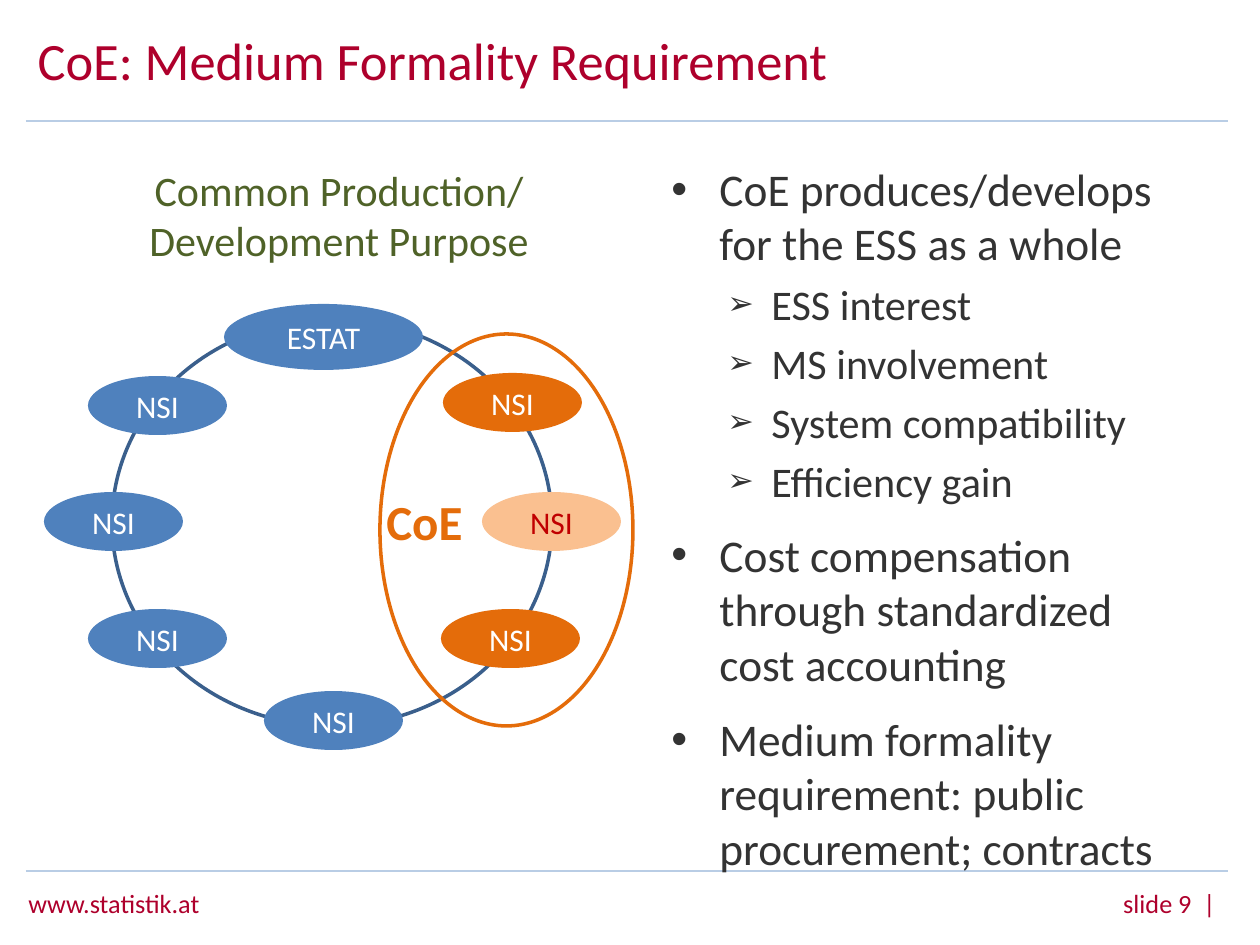
from lxml.etree import SubElement
from pptx import Presentation
from pptx.dml.color import RGBColor
from pptx.enum.shapes import MSO_CONNECTOR as CONN, MSO_SHAPE as SHAPE
from pptx.enum.text import MSO_ANCHOR as ANCHOR, PP_ALIGN as ALIGN
from pptx.oxml.ns import qn
from pptx.util import Pt

PX = 914400 / 126
FONT = "Calibri"
COLORS = {
    "brand": "AE002C", "rule": "B9CDE5", "body": "333333", "purpose": "4F6228",
    "ring": "3A5F8C", "member": "4F81BD", "coe": "E46C0A", "lead": "FAC090",
    "lead_text": "C00000", "white": "FFFFFF",
}
BULLETS = [
    (0, "CoE produces/develops for the ESS as a whole"),
    (1, "ESS interest"),
    (1, "MS involvement"),
    (1, "System compatibility"),
    (1, "Efficiency gain"),
    (0, "Cost compensation through standardized cost accounting"),
    (0, "Medium formality requirement: public procurement; contracts"),
]
LEVELS = [
    {"char": "•", "pct": 100, "left": 48, "hang": 48, "size": 25.9, "before": 12},
    {"char": "➢", "pct": 75, "left": 100, "hang": 44, "size": 24.1, "before": 4.8},
]


def emu(*lengths):
    """Turn px lengths into EMU."""
    return [round(n * PX) for n in lengths]


def rgb(name):
    """Look up a named colour."""
    return RGBColor.from_string(COLORS[name])


def style(p, size, color, bold=False, align=ALIGN.LEFT):
    """Format a paragraph and its runs."""
    p.alignment = align
    for r in p.runs:
        r.font.name, r.font.size, r.font.bold = FONT, Pt(size), bold
        r.font.color.rgb = rgb(color)


def add_text(s, box, text, size, color, bold=False, align=ALIGN.LEFT, wrap=True):
    """Add a one-paragraph text box."""
    tf = s.shapes.add_textbox(*emu(*box)).text_frame
    tf.word_wrap = wrap
    tf.paragraphs[0].text = text
    style(tf.paragraphs[0], size, color, bold, align)


def add_rule(s, x, y, w):
    """Add a horizontal rule."""
    line = s.shapes.add_connector(CONN.STRAIGHT, *emu(x, y, x + w, y))
    line.line.color.rgb = rgb("rule")
    line.line.width = Pt(1.5)
    SubElement(line._element.spPr, qn("a:effectLst"))


def add_oval(s, box, fill=None, line=None, text="", color="white"):
    """Add a filled, labelled oval or an outlined one."""
    sp = s.shapes.add_shape(SHAPE.OVAL, *emu(*box))
    sp.shadow.inherit = False
    if fill:
        sp.fill.solid()
        sp.fill.fore_color.rgb = rgb(fill)
    else:
        sp.fill.background()
    if line:
        sp.line.color.rgb = rgb(line)
        sp.line.width = Pt(2)
    else:
        sp.line.fill.background()
    if text:
        tf = sp.text_frame
        tf.vertical_anchor = ANCHOR.MIDDLE
        tf.text = text
        style(tf.paragraphs[0], 18, color, align=ALIGN.CENTER)


def add_header(s, x, y, w, h):
    """Place the title and the rule below it."""
    title = s.shapes.title
    title.left, title.top, title.width, title.height = emu(x, y, w - 241, h - 23)
    tf = title.text_frame
    tf.vertical_anchor = ANCHOR.MIDDLE
    tf.text = "CoE: Medium Formality Requirement"
    style(tf.paragraphs[0], 30, "brand")
    tf.paragraphs[0].line_spacing = Pt(30)
    add_rule(s, x + 1, y + h, w)


def add_footer(s, x, y, w, h):
    """Place the footer rule, the address and the slide number."""
    add_rule(s, x, y, w)
    add_text(s, (x - 10, y + 10, 286, h), "www.statistik.at", 15, "brand")
    add_text(s, (x + w - 456, y + 10, 456, h), "slide 9  |", 15, "brand",
             align=ALIGN.RIGHT)


def add_network(s, x, y, w, h):
    """Draw the ring of institutes and the centre of excellence."""
    add_oval(s, (x + 68, y + 161, 440, 407), line="ring")
    add_oval(s, (x + 180, y + 146, 199, 66), "member", text="ESTAT")
    members = [
        (44, 451, "member"), (44, 218, "member"), (220, 533, "member"),
        (0, 334, "member"), (397, 451, "coe"), (399, 215, "coe"), (438, 334, "lead"),
    ]
    for dx, dy, fill in members:
        color = "lead_text" if fill == "lead" else "white"
        add_oval(s, (x + dx, y + dy, 139, 59), fill, text="NSI", color=color)
    add_text(s, (x + 91, y, 408, 115), "Common Production/\vDevelopment Purpose",
             24, "purpose", align=ALIGN.CENTER, wrap=False)
    add_oval(s, (x + w - 253, y + h - 416, 253, 392), line="coe")
    add_text(s, (x + 330, y + 327, 102, 72), "CoE", 28, "coe", bold=True, wrap=False)


def add_bullets(s, x, y, w, h):
    """Place the two-level bullet list."""
    tf = s.shapes.add_textbox(*emu(x, y, w, h)).text_frame
    tf.word_wrap = True
    for i, (level, text) in enumerate(BULLETS):
        p = tf.paragraphs[0] if i == 0 else tf.add_paragraph()
        p.text, p.level = text, level
        look = LEVELS[level]
        if i:
            p.space_before = Pt(look["before"])
        pPr = p._p.get_or_add_pPr()
        left, hang = emu(look["left"], look["hang"])
        pPr.set("marL", str(left))
        pPr.set("indent", str(-hang))
        SubElement(pPr, qn("a:buSzPct"), val=str(look["pct"] * 1000))
        SubElement(pPr, qn("a:buFont"), typeface="Arial")
        SubElement(pPr, qn("a:buChar"), char=look["char"])
        style(p, look["size"], "body")


def main():
    """Build and save the slide."""
    prs = Presentation()
    prs.slide_width, prs.slide_height = emu(1260, 945)
    s = prs.slides.add_slide(prs.slide_layouts[5])
    add_header(s, 25, 31, 1202, 90)
    add_footer(s, 26, 871, 1202, 44)
    add_bullets(s, 659, 155, 547, 687)
    add_network(s, 44, 158, 589, 592)
    prs.save("out.pptx")


if __name__ == "__main__":
    main()
